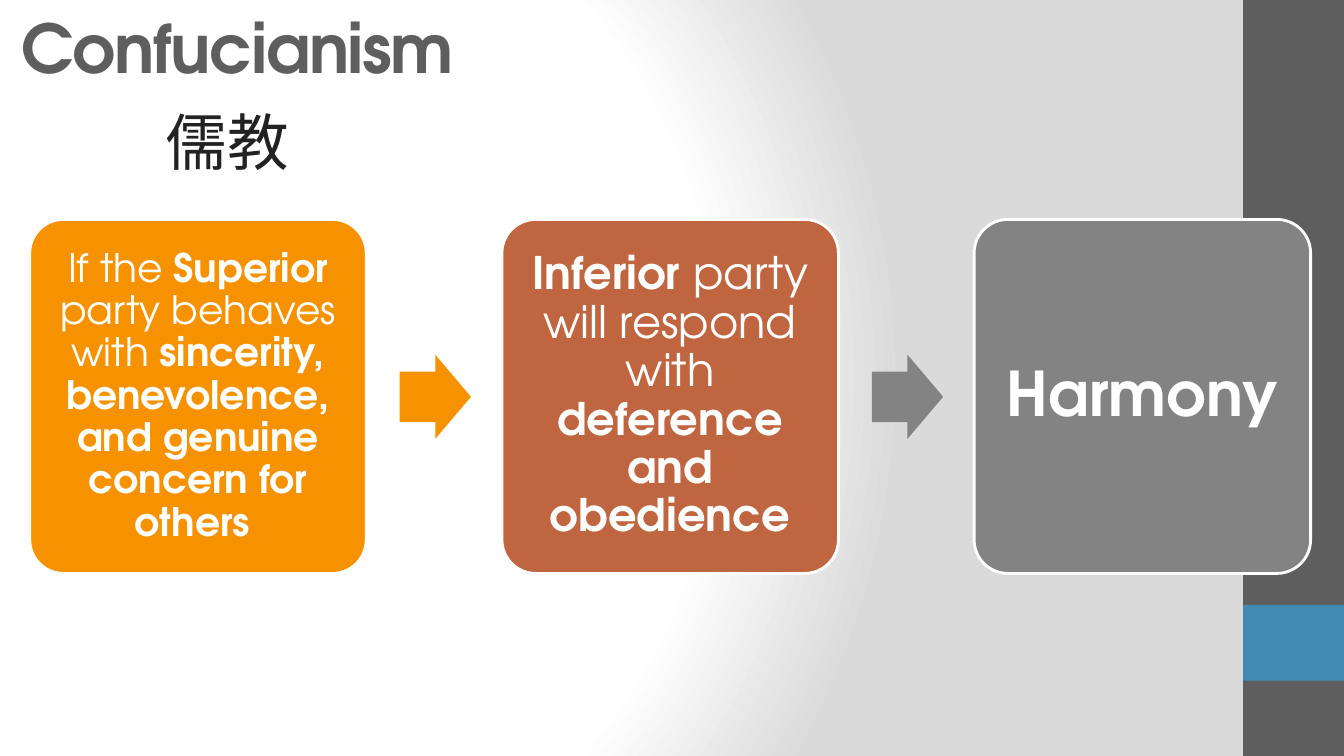
from lxml import etree
from pptx import Presentation
from pptx.dml.color import RGBColor
from pptx.enum.shapes import MSO_SHAPE as Shape
from pptx.enum.text import MSO_ANCHOR as Anchor, MSO_AUTO_SIZE as AutoSize, PP_ALIGN as Align
from pptx.oxml import parse_xml
from pptx.oxml.ns import nsdecls, qn
from pptx.util import Cm, Pt

WHITE = RGBColor(0xFF, 0xFF, 0xFF)
PALE_GRAY = RGBColor(0xDA, 0xDA, 0xDA)
DARK_GRAY = RGBColor(0x5E, 0x5E, 0x5E)
MID_GRAY = RGBColor(0x83, 0x83, 0x83)
INK = RGBColor(0x22, 0x22, 0x22)
BLUE = RGBColor(0x41, 0x8A, 0xB3)
ORANGE = RGBColor(0xF6, 0x92, 0x00)
RUST = RGBColor(0xBF, 0x65, 0x40)
FONT = "TeX Gyre Adventor"


def write(frame, *parts, size, color, font=FONT, align=Align.LEFT,
          anchor=Anchor.MIDDLE, margin=None, line_spacing=None):
    """Fill a text frame with one paragraph of (text, bold) parts."""
    frame.word_wrap = True
    frame.vertical_anchor = anchor
    if margin is not None:
        frame.margin_left = frame.margin_right = Cm(margin)
        frame.margin_top = frame.margin_bottom = Cm(margin)
    para = frame.paragraphs[0]
    para.alignment = align
    para.line_spacing = line_spacing
    for text, bold in parts:
        span = para.add_run()
        span.text = text
        span.font.name = font
        span.font.size = Pt(size)
        span.font.bold = bold
        span.font.color.rgb = color


def add_block(kind, left, top, width, height, color, outline=None):
    block = page.shapes.add_shape(kind, Cm(left), Cm(top), Cm(width), Cm(height))
    block.shadow.inherit = False
    block.fill.solid()
    block.fill.fore_color.rgb = color
    if outline is None:
        block.line.fill.background()
    else:
        block.line.color.rgb = outline
        block.line.width = Pt(2)
    return block


deck = Presentation()
deck.slide_width, deck.slide_height = Cm(33.87), Cm(19.05)
page = deck.slides.add_slide(deck.slide_layouts[5])

# Background: circular gradient from white to pale gray
page.background.fill.solid()
solid = page.background.fill._xPr.find(qn("a:solidFill"))
gradient = parse_xml(f'<a:gradFill {nsdecls("a")} rotWithShape="1"><a:gsLst/></a:gradFill>')
for position, color in ((0, WHITE), (75, WHITE), (100, PALE_GRAY)):
    stop = etree.SubElement(gradient[0], qn("a:gs"), pos=str(position * 1000))
    etree.SubElement(stop, qn("a:srgbClr"), val=str(color))
circle = etree.SubElement(gradient, qn("a:path"), {"path": "circle"})
etree.SubElement(circle, qn("a:fillToRect"), l="20000", t="50000", r="100000", b="50000")
solid.getparent().replace(solid, gradient)

# Side bar
add_block(Shape.RECTANGLE, 31.33, 0, 2.54, 19.05, DARK_GRAY)
add_block(Shape.RECTANGLE, 31.33, 15.24, 2.54, 1.91, BLUE)

# Title and Chinese name
title = page.shapes.title
title.left, title.top, title.width, title.height = Cm(0.3), Cm(-0.33), Cm(12.17), Cm(3.02)
title.text_frame.auto_size = AutoSize.NONE
write(title.text_frame, ("Confucianism", True), size=48, color=DARK_GRAY)
title.text_frame.paragraphs[0].runs[0].font._element.set("spc", "-100")

name_box = page.shapes.add_textbox(Cm(3.93), Cm(2.5), Cm(3.95), Cm(2.13))
write(name_box.text_frame, ("儒教", False), size=44, color=INK, font="Arial", anchor=Anchor.TOP)
name_box.text_frame.auto_size = AutoSize.SHAPE_TO_FIT_TEXT

# Steps joined by arrows
STEP = 11.9
steps = (
    (ORANGE, 28, 0.3, (("If the ", False), ("Superior ", True),
                       ("party behaves with ", False),
                       ("sincerity, benevolence, and genuine concern for others ", True))),
    (RUST, 32, 0.34, (("Inferior ", True), ("party will respond with ", False),
                      ("deference and obedience", True))),
    (MID_GRAY, 44, 0.46, (("Harmony", True),)),
)
for index, (color, size, margin, parts) in enumerate(steps):
    box = add_block(Shape.ROUNDED_RECTANGLE, 0.75 + index * STEP, 5.53, 8.48, 8.92, color, WHITE)
    box.adjustments[0] = 0.1
    write(box.text_frame, *parts, size=size, color=WHITE, align=Align.CENTER,
          margin=margin, line_spacing=0.9)

for index, color in enumerate((ORANGE, MID_GRAY)):
    arrow = add_block(Shape.RIGHT_ARROW, 10.07 + index * STEP, 8.94, 1.8, 2.12, color)
    arrow.adjustments[0] = 0.6
    arrow.adjustments[1] = 0.5

deck.save("out.pptx")
